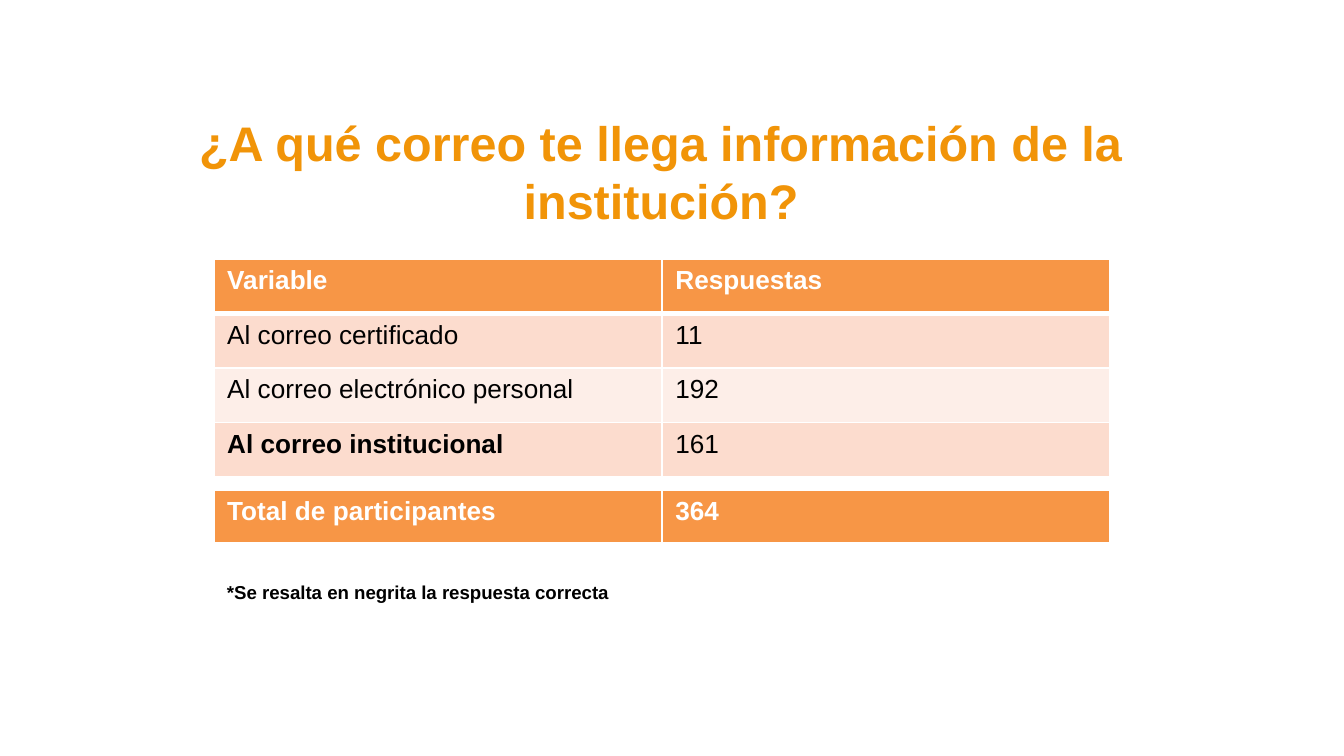
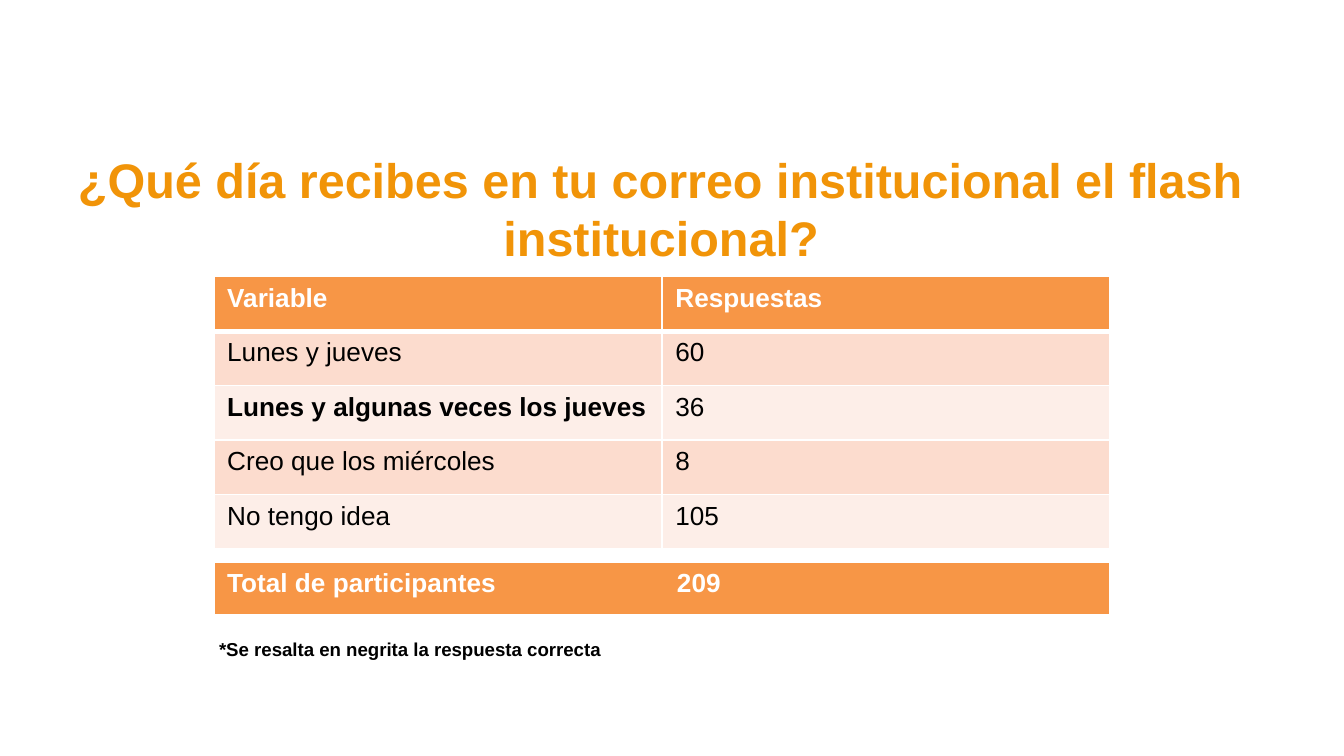
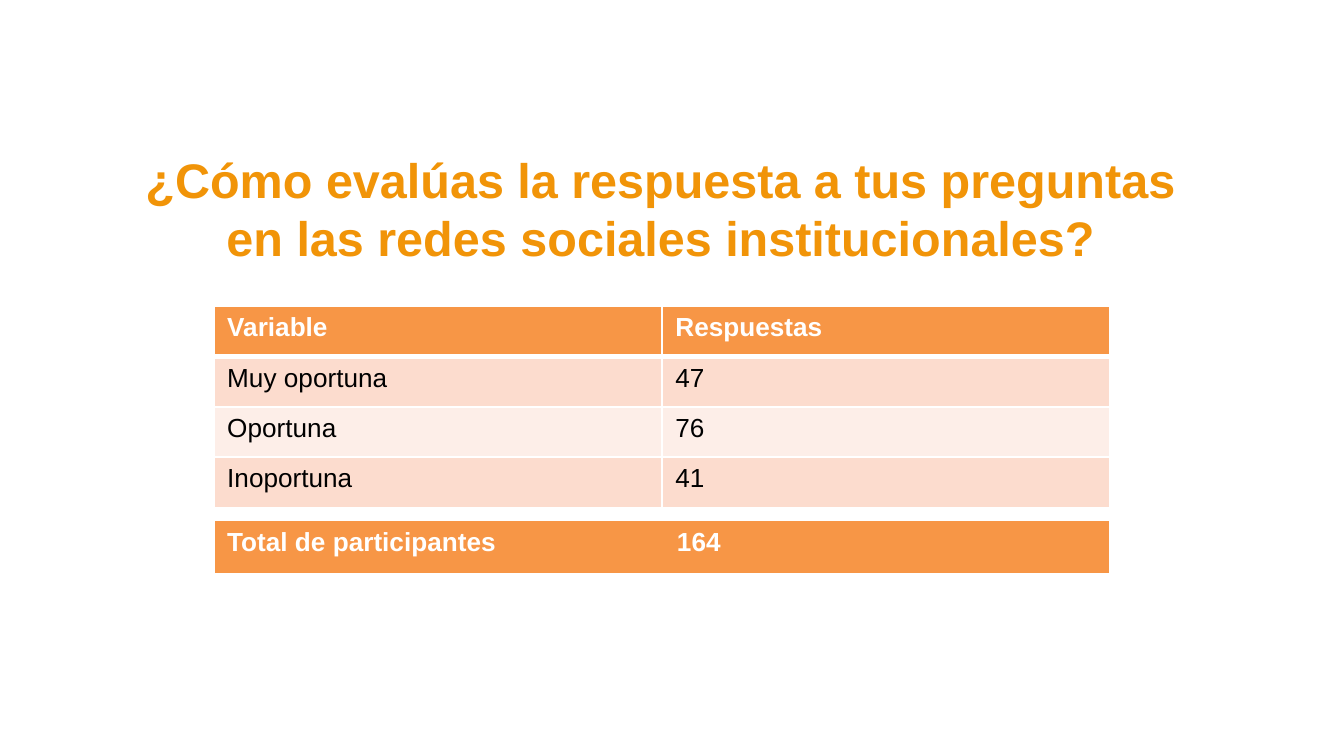
"""Build three survey slides, each with a question, an answer table and a total."""
from dataclasses import dataclass
from typing import Optional

from lxml import etree
from pptx import Presentation
from pptx.dml.color import RGBColor
from pptx.enum.text import MSO_ANCHOR, PP_ALIGN
from pptx.oxml.ns import qn
from pptx.util import Cm, Pt

CENTER, LEFT = PP_ALIGN.CENTER, PP_ALIGN.LEFT
TOP, MIDDLE = MSO_ANCHOR.TOP, MSO_ANCHOR.MIDDLE

WHITE = RGBColor(0xFF, 0xFF, 0xFF)
BLACK = RGBColor(0x00, 0x00, 0x00)
GOLD = RGBColor(0xF1, 0x94, 0x08)
ORANGE = RGBColor(0xF7, 0x96, 0x46)
PEACH = RGBColor(0xFC, 0xDC, 0xCE)
CREAM = RGBColor(0xFD, 0xEE, 0xE8)

FONT = "Arial"
TABLE_LEFT, TABLE_WIDTH = Cm(4.04), Cm(16.94)
TITLE_LEFT, TITLE_WIDTH, TITLE_HEIGHT = Cm(1.22), Cm(22.56), Cm(2.62)
NOTE_HEIGHT = Cm(0.68)
ROW_HEIGHT, TOTAL_GAP = Cm(1.03), Cm(0.25)
TOTAL_TAB = Cm(8.5)
THIN, THICK = Pt(1), Pt(3)

HEADER = ("Variable", "Respuestas")
TOTAL_LABEL = "Total de participantes"
NOTE = "*Se resalta en negrita la respuesta correcta"


@dataclass(frozen=True)
class Answer:
    """One answer option with its count."""
    label: str
    count: int
    correct: bool = False


@dataclass(frozen=True)
class Question:
    """Content and placement of one survey slide."""
    title: str
    title_top: Cm
    table_top: Cm
    answers: tuple[Answer, ...]
    row_height: Cm = ROW_HEIGHT
    split_total: bool = False
    note_left: Cm = TABLE_LEFT
    note_top: Optional[Cm] = None


QUESTIONS = (
    Question(
        "¿A qué correo te llega información de la\ninstitución?",
        Cm(1.93), Cm(4.9),
        (Answer("Al correo certificado", 11),
         Answer("Al correo electrónico personal", 192),
         Answer("Al correo institucional", 161, correct=True)),
        split_total=True, note_top=Cm(10.85)),
    Question(
        "¿Qué día recibes en tu correo institucional el flash institucional?",
        Cm(2.62), Cm(5.23),
        (Answer("Lunes y jueves", 60),
         Answer("Lunes y algunas veces los jueves", 36, correct=True),
         Answer("Creo que los miércoles", 8),
         Answer("No tengo idea", 105)),
        note_left=Cm(3.89), note_top=Cm(11.94)),
    Question(
        "¿Cómo evalúas la respuesta a tus preguntas\n"
        "en las redes sociales institucionales?",
        Cm(2.62), Cm(5.79),
        (Answer("Muy oportuna", 47),
         Answer("Oportuna", 76),
         Answer("Inoportuna", 41)),
        row_height=Cm(0.95)),
)


def style_text(frame, size: int, color: RGBColor, bold: bool, align=LEFT) -> None:
    """Format every run in a text frame."""
    for para in frame.paragraphs:
        para.alignment = align
        for span in para.runs:
            span.font.name = FONT
            span.font.size = Pt(size)
            span.font.bold = bold
            span.font.color.rgb = color


def add_text(page, text: str, area: tuple, size: int, color: RGBColor,
             align=LEFT, anchor=TOP) -> None:
    """Add a bold text box."""
    frame = page.shapes.add_textbox(*area).text_frame
    frame.word_wrap = True
    frame.vertical_anchor = anchor
    frame.text = text
    style_text(frame, size, color, True, align)


def set_borders(cell, bottom: int) -> None:
    """Give a cell white borders with the chosen bottom width."""
    properties = cell._tc.get_or_add_tcPr()
    for side, width in zip("LRTB", (THIN, THIN, THIN, bottom)):
        line = etree.SubElement(properties, qn(f"a:ln{side}"), w=str(width))
        fill = etree.SubElement(line, qn("a:solidFill"))
        etree.SubElement(fill, qn("a:srgbClr"), val=str(WHITE))


def fill_cell(cell, text: str, fill: RGBColor, color: RGBColor, bold: bool,
              bottom: int) -> None:
    """Write and format one table cell."""
    set_borders(cell, bottom)
    cell.fill.solid()
    cell.fill.fore_color.rgb = fill
    cell.text_frame.text = text
    style_text(cell.text_frame, 14, color, bold)


def new_table(page, rows: int, columns: int, top: int, row_height: int):
    """Add a plain table of the shared width."""
    frame = page.shapes.add_table(rows, columns, TABLE_LEFT, top, TABLE_WIDTH,
                                  rows * row_height)
    frame.table.horz_banding = False
    return frame.table


def fill_band(table, texts: tuple[str, ...]) -> None:
    """Fill the first row of a table as an orange band."""
    for cell, text in zip(table.rows[0].cells, texts):
        fill_cell(cell, text, ORANGE, WHITE, True, THICK)


def add_answers(page, question: Question) -> None:
    """Add the table of answers."""
    table = new_table(page, len(question.answers) + 1, len(HEADER),
                      question.table_top, question.row_height)
    fill_band(table, HEADER)
    for index, answer in enumerate(question.answers):
        label, count = table.rows[index + 1].cells
        fill = CREAM if index % 2 else PEACH
        fill_cell(label, answer.label, fill, BLACK, answer.correct, THIN)
        fill_cell(count, str(answer.count), fill, BLACK, False, THIN)


def add_total(page, question: Question) -> None:
    """Add the total band under the answers."""
    rows = len(question.answers) + 1
    top = question.table_top + rows * question.row_height + TOTAL_GAP
    texts = (TOTAL_LABEL, str(sum(answer.count for answer in question.answers)))
    if not question.split_total:
        texts = ("\t".join(texts),)
    table = new_table(page, 1, len(texts), top, ROW_HEIGHT)
    fill_band(table, texts)
    if not question.split_total:
        para = table.cell(0, 0).text_frame.paragraphs[0]
        tabs = etree.SubElement(para._p.get_or_add_pPr(), qn("a:tabLst"))
        etree.SubElement(tabs, qn("a:tab"), pos=str(TOTAL_TAB), algn="l")


def add_question(deck, question: Question) -> None:
    """Add one complete survey slide."""
    page = deck.slides.add_slide(deck.slide_layouts[6])
    title_area = (TITLE_LEFT, question.title_top, TITLE_WIDTH, TITLE_HEIGHT)
    add_text(page, question.title, title_area, 26, GOLD, CENTER, MIDDLE)
    add_answers(page, question)
    add_total(page, question)
    if question.note_top is not None:
        note_area = (question.note_left, question.note_top, TABLE_WIDTH, NOTE_HEIGHT)
        add_text(page, NOTE, note_area, 10, BLACK)


def main() -> None:
    """Build and save the deck."""
    deck = Presentation()
    deck.slide_width, deck.slide_height = Cm(25.4), Cm(14.29)
    for question in QUESTIONS:
        add_question(deck, question)
    deck.save("out.pptx")


if __name__ == "__main__":
    main()
